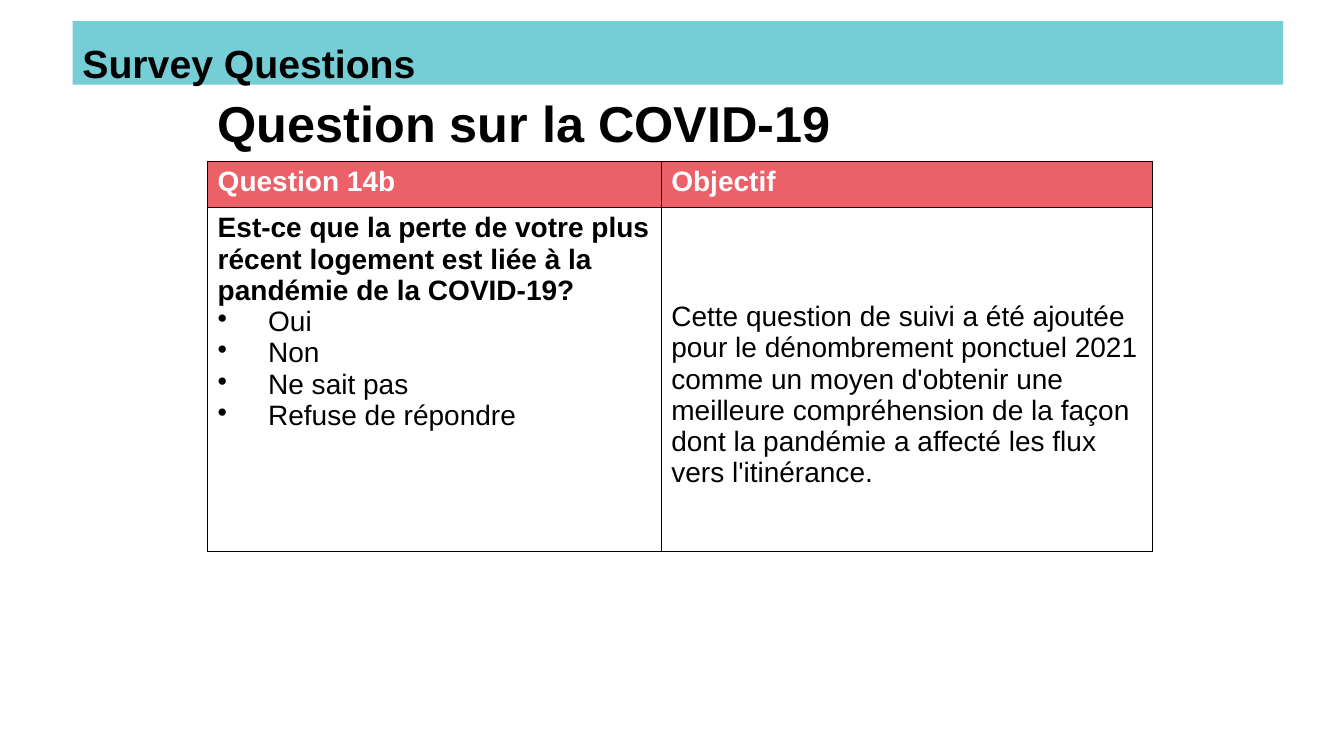
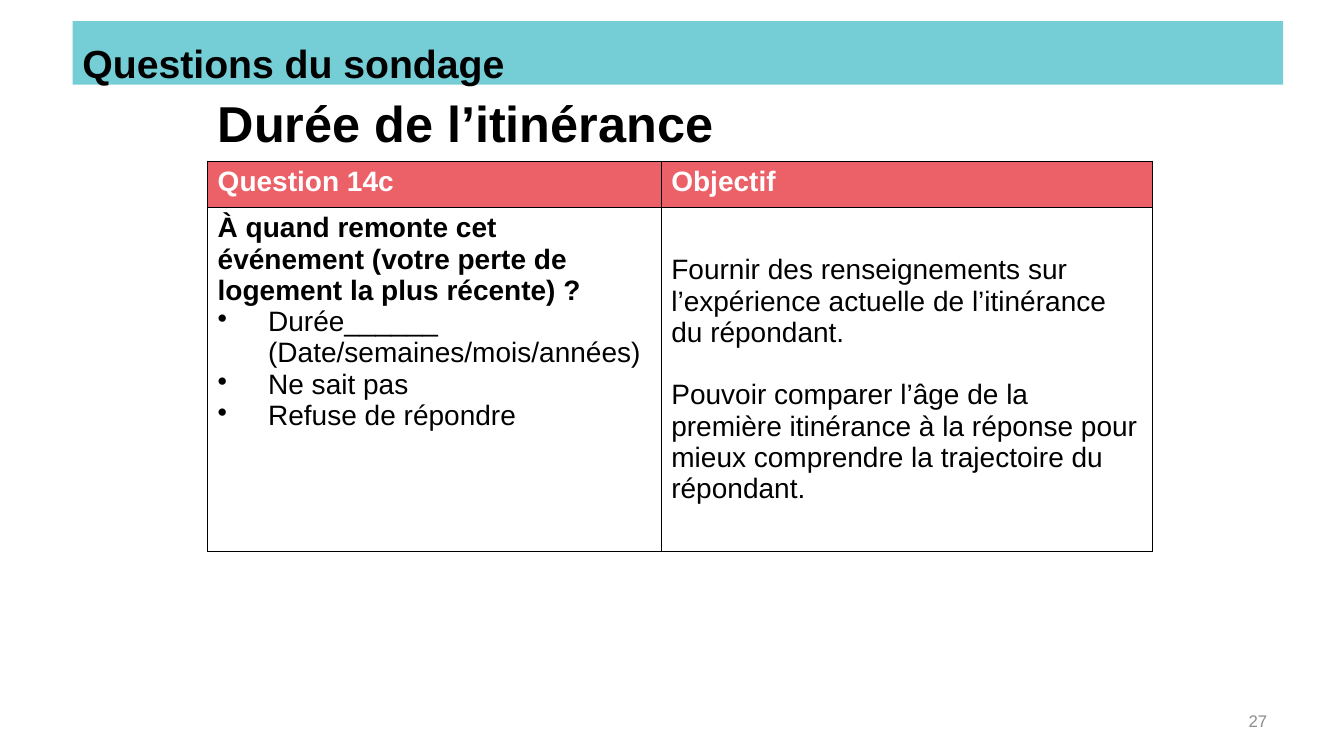
import pptx
import pptx.util
import pptx.dml.color
import pptx.enum.shapes
import pptx.enum.text
import pptx.oxml
import pptx.oxml.ns

RGBColor = pptx.dml.color.RGBColor
Align = pptx.enum.text.PP_ALIGN
Anchor = pptx.enum.text.MSO_ANCHOR

BLACK = RGBColor(0x00, 0x00, 0x00)
WHITE = RGBColor(0xFF, 0xFF, 0xFF)
TURQUOISE = RGBColor(0x75, 0xCE, 0xD6)
CORAL = RGBColor(0xEC, 0x61, 0x68)
GREY = RGBColor(0x8C, 0x8C, 0x8C)

FONT = "Arial"
BODY_SIZE = 20
BODY_LINE = pptx.util.Pt(22.4)
HANGING = pptx.util.Inches(0.5)

CONTENT_LEFT = 15.45
TABLE_TOP = 21.33
TABLE_COLUMNS = (33.75, 36.53)
TABLE_ROWS = (6.13, 45.47)


class SurveyDeck:
    def __init__(self):
        self.presentation = pptx.Presentation()
        self.presentation.slide_width = pptx.util.Inches(13.33)
        self.presentation.slide_height = pptx.util.Inches(7.5)
        self.slide = None

    def across(self, percent):
        return round(self.presentation.slide_width * percent / 100)

    def down(self, percent):
        return round(self.presentation.slide_height * percent / 100)

    def area(self, left, top, width, height):
        return self.across(left), self.down(top), self.across(width), self.down(height)

    def style(self, paragraph, size, color=BLACK, bold=False, align=Align.LEFT):
        paragraph.alignment = align
        for run in paragraph.runs:
            run.font.name = FONT
            run.font.size = pptx.util.Pt(size)
            run.font.bold = bold
            run.font.color.rgb = color

    def new_slide(self):
        self.slide = self.presentation.slides.add_slide(self.presentation.slide_layouts[5])

    def title(self, wording):
        heading = self.slide.shapes.title
        heading.left, heading.top, heading.width, heading.height = self.area(
            CONTENT_LEFT, 11, 66.6, 10.27)
        frame = heading.text_frame
        frame.text = wording
        frame.auto_size = pptx.enum.text.MSO_AUTO_SIZE.NONE
        frame.vertical_anchor = Anchor.MIDDLE
        self.style(frame.paragraphs[0], 36, bold=True)

    def band(self, section):
        strip = self.slide.shapes.add_shape(
            pptx.enum.shapes.MSO_SHAPE.RECTANGLE, *self.area(5.4, 2.8, 90.08, 8.4))
        strip.shadow.inherit = False
        strip.fill.solid()
        strip.fill.fore_color.rgb = TURQUOISE
        strip.line.fill.background()
        strip.text_frame.text = section
        strip.text_frame.vertical_anchor = Anchor.TOP
        paragraph = strip.text_frame.paragraphs[0]
        paragraph.line_spacing = pptx.util.Pt(43.2)
        self.style(paragraph, 28, bold=True)

    def cell(self, cell, lines, fill=None):
        properties = cell._tc.get_or_add_tcPr()
        for side in ("lnL", "lnR", "lnT", "lnB"):
            properties.append(pptx.oxml.parse_xml(
                f'<a:{side} {pptx.oxml.ns.nsdecls("a")} w="12700"><a:solidFill>'
                f'<a:srgbClr val="{BLACK}"/></a:solidFill></a:{side}>'))
        if fill is None:
            cell.fill.background()
        else:
            cell.fill.solid()
            cell.fill.fore_color.rgb = fill
        cell.text_frame.text = "\n".join(lines)
        return cell.text_frame.paragraphs

    def bullet(self, paragraph):
        properties = paragraph._p.get_or_add_pPr()
        properties.set("marL", str(HANGING))
        properties.set("indent", str(-HANGING))
        properties.append(pptx.oxml.parse_xml(
            f'<a:buChar {pptx.oxml.ns.nsdecls("a")} char="•"/>'))

    def question_table(self, number, question, answers, objective, lowered=False):
        table = self.slide.shapes.add_table(2, 2, *self.area(
            CONTENT_LEFT, TABLE_TOP, sum(TABLE_COLUMNS), sum(TABLE_ROWS))).table
        for column, width in zip(table.columns, TABLE_COLUMNS):
            column.width = self.across(width)
        for row, height in zip(table.rows, TABLE_ROWS):
            row.height = self.down(height)

        for index, label in enumerate((f"Question {number}", "Objectif")):
            header = self.cell(table.cell(0, index), [label], CORAL)
            self.style(header[0], BODY_SIZE, WHITE, bold=True)

        prompt, *choices = self.cell(table.cell(1, 0), [question, *answers])
        self.style(prompt, BODY_SIZE, bold=True)
        for choice in choices:
            self.bullet(choice)
            self.style(choice, BODY_SIZE)

        purpose = table.cell(1, 1)
        purpose.vertical_anchor = Anchor.MIDDLE
        if lowered:
            purpose.margin_top += BODY_LINE
        for index, paragraph in enumerate(self.cell(purpose, objective)):
            if index:
                paragraph.space_before = BODY_LINE
            self.style(paragraph, BODY_SIZE)

    def page_number(self, number):
        footer = self.slide.shapes.add_textbox(*self.area(71.7, 92.67, 23.33, 5.33))
        frame = footer.text_frame
        frame.word_wrap = True
        frame.vertical_anchor = Anchor.MIDDLE
        frame.text = number
        self.style(frame.paragraphs[0], 12, GREY, align=Align.RIGHT)


def main():
    deck = SurveyDeck()
    undecided = ["Ne sait pas", "Refuse de répondre"]

    deck.new_slide()
    deck.title("Question sur la COVID-19")
    deck.band("Survey Questions")
    deck.question_table(
        "14b",
        "Est-ce que la perte de votre plus récent logement est liée à la pandémie de la COVID-19?",
        ["Oui", "Non", *undecided],
        ["Cette question de suivi a été ajoutée pour le dénombrement ponctuel 2021 comme un "
         "moyen d'obtenir une meilleure compréhension de la façon dont la pandémie a affecté "
         "les flux vers l'itinérance."],
        lowered=True)

    deck.new_slide()
    deck.title("Durée de l’itinérance")
    deck.band("Questions du sondage")
    deck.question_table(
        "14c",
        "À quand remonte cet événement (votre perte de logement la plus récente) ?",
        ["Durée______ (Date/semaines/mois/années)", *undecided],
        ["Fournir des renseignements sur l’expérience actuelle de l’itinérance du répondant.",
         "Pouvoir comparer l’âge de la première itinérance à la réponse pour mieux comprendre "
         "la trajectoire du répondant."])
    deck.page_number("27")

    deck.presentation.save("out.pptx")


if __name__ == "__main__":
    main()
